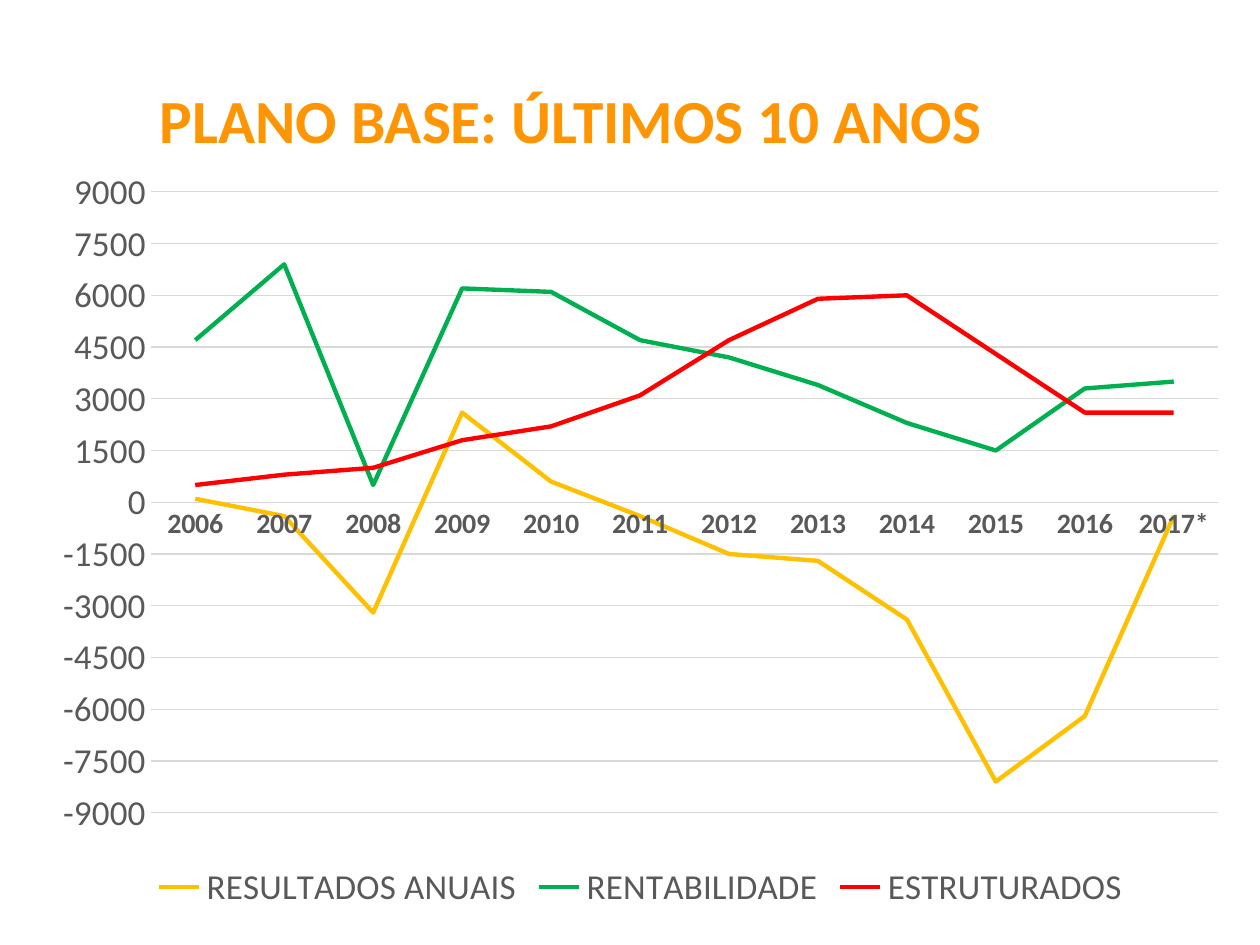
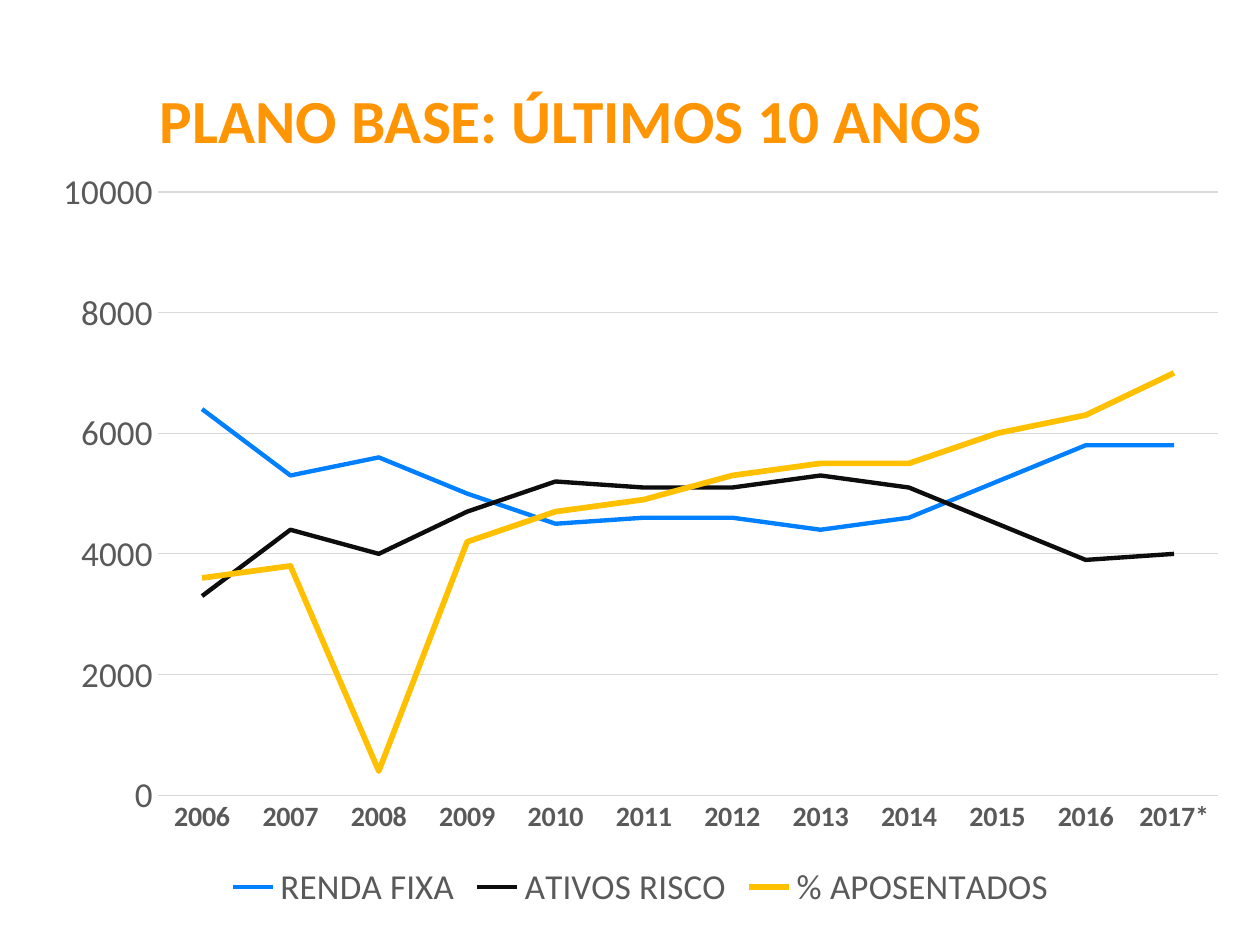
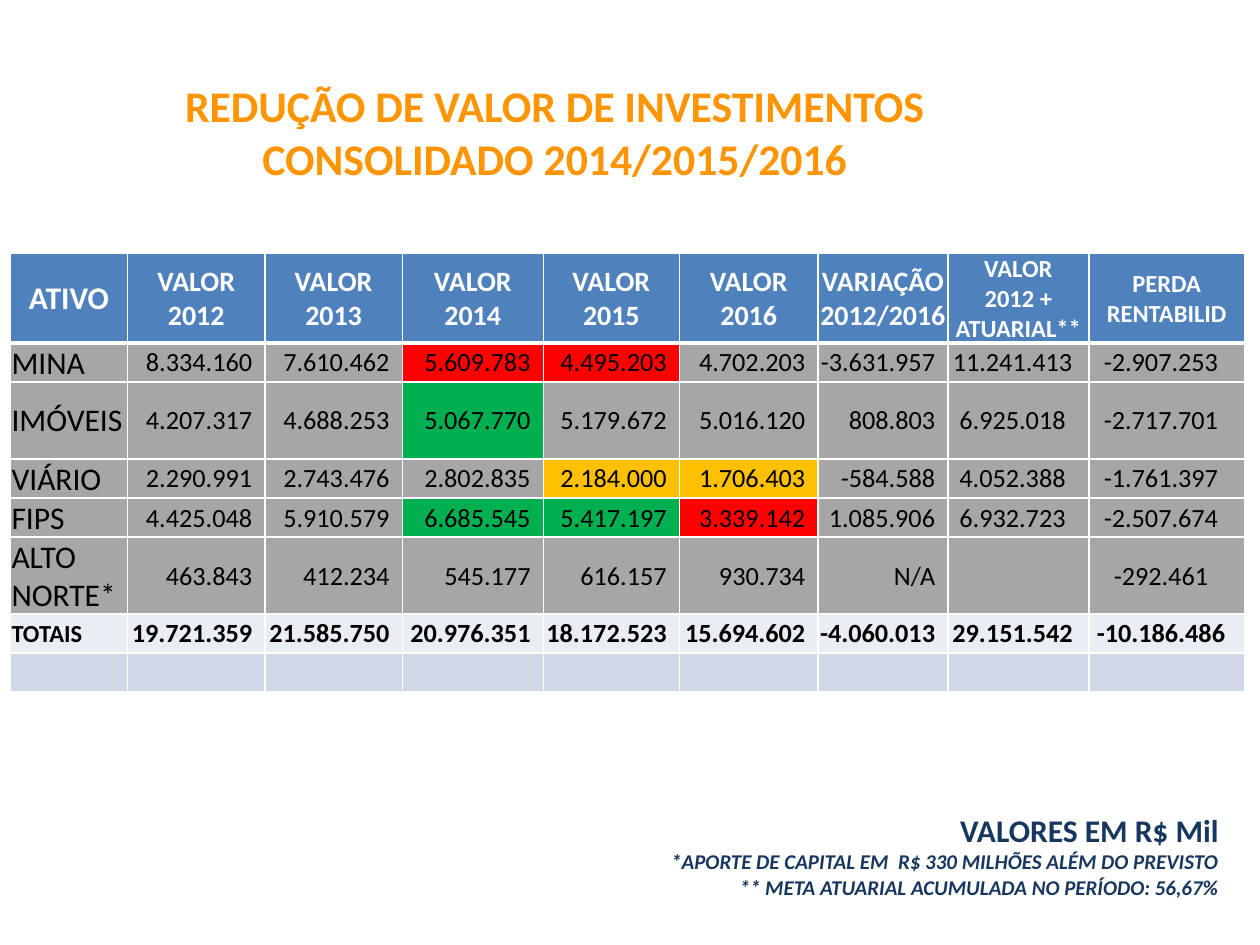
from pptx import Presentation
from pptx.chart.data import CategoryChartData
from pptx.dml.color import RGBColor
from pptx.enum.chart import XL_CHART_TYPE as ChartType, XL_LEGEND_POSITION as LegendPosition
from pptx.enum.chart import XL_TICK_MARK as TickMark
from pptx.enum.text import MSO_ANCHOR as Anchor, MSO_AUTO_SIZE as AutoSize, PP_ALIGN as Align
from pptx.oxml import parse_xml
from pptx.oxml.ns import nsdecls
from pptx.util import Pt

FONT = "Calibri"
COLORS = {
    "title": "FF9502", "note": "17375E", "axis_text": "595959", "grid": "D9D9D9",
    "yellow": "FFC000", "green": "00B050", "red": "FF0000", "blue": "0080FF",
    "near_black": "0D0D0D", "black": "000000", "white": "FFFFFF",
    "header": "4F81BD", "gray": "A6A6A6", "totals": "E9EDF4", "blank_row": "D0D8E8",
}
TITLE_ONLY = 5
PLAN_TITLE = ["PLANO BASE: ÚLTIMOS 10 ANOS"]
YEARS = [str(year) for year in range(2006, 2017)] + ["2017*"]

# Series: name, colour, line width, values
RESULT_SERIES = [
    ("RESULTADOS ANUAIS", "yellow", 2.5,
     [100, -400, -3200, 2600, 600, -400, -1500, -1700, -3400, -8100, -6200, -400]),
    ("RENTABILIDADE", "green", 2.5,
     [4700, 6900, 500, 6200, 6100, 4700, 4200, 3400, 2300, 1500, 3300, 3500]),
    ("ESTRUTURADOS", "red", 2.5,
     [500, 800, 1000, 1800, 2200, 3100, 4700, 5900, 6000, 4300, 2600, 2600]),
]
ALLOCATION_SERIES = [
    ("RENDA FIXA", "blue", 2.5,
     [6400, 5300, 5600, 5000, 4500, 4600, 4600, 4400, 4600, 5200, 5800, 5800]),
    ("ATIVOS RISCO", "near_black", 2.5,
     [3300, 4400, 4000, 4700, 5200, 5100, 5100, 5300, 5100, 4500, 3900, 4000]),
    ("% APOSENTADOS", "yellow", 3.25,
     [3600, 3800, 400, 4200, 4700, 4900, 5300, 5500, 5500, 6000, 6300, 7000]),
]

# Table of assets
HEADERS = ["ATIVO", "VALOR 2012", "VALOR 2013", "VALOR 2014", "VALOR 2015", "VALOR 2016",
           "VARIAÇÃO\v2012/2016", "VALOR\n2012 + ATUARIAL**", "PERDA\nRENTABILID"]
HEADER_SIZES = [18] + [16] * 6 + [14] * 2
ASSETS = [
    ["MINA", "8.334.160", "7.610.462", "5.609.783", "4.495.203", "4.702.203",
     "-3.631.957", "11.241.413", "-2.907.253"],
    ["IMÓVEIS", "4.207.317", "4.688.253", "5.067.770", "5.179.672", "5.016.120",
     "808.803", "6.925.018", "-2.717.701"],
    ["VIÁRIO", "2.290.991", "2.743.476", "2.802.835", "2.184.000", "1.706.403",
     "-584.588", "4.052.388", "-1.761.397"],
    ["FIPS", "4.425.048", "5.910.579", "6.685.545", "5.417.197", "3.339.142",
     "1.085.906", "6.932.723", "-2.507.674"],
    ["ALTO NORTE*", "463.843", "412.234", "545.177", "616.157", "930.734",
     "N/A", "", "-292.461"],
]
TOTALS = ["TOTAIS", "19.721.359", "21.585.750", "20.976.351", "18.172.523", "15.694.602",
          "-4.060.013", "29.151.542", "-10.186.486"]
HIGHLIGHTS = {
    (1, 3): "red", (1, 4): "red", (2, 3): "green", (3, 4): "yellow", (3, 5): "yellow",
    (4, 3): "green", (4, 4): "green", (4, 5): "red",
}
COLUMN_WIDTHS = [67, 78.5, 78.5, 80.6, 77.8, 79.2, 74.2, 80.6, 89]
ROW_HEIGHTS = [51, 22.3, 44, 22.3, 22.3, 44, 22.3, 22.3]


def rgb(name):
    return RGBColor.from_string(COLORS[name])


def style_font(font, size, color, bold=False, italic=False):
    font.name = FONT
    font.size = Pt(size)
    font.bold = bold
    font.italic = italic
    font.color.rgb = rgb(color)


def add_titled_slide(presentation, lines, size, left, top):
    slide = presentation.slides.add_slide(presentation.slide_layouts[TITLE_ONLY])
    title = slide.shapes.title
    title.left, title.top, title.width, title.height = Pt(left), Pt(top), Pt(618), Pt(65.5)
    frame = title.text_frame
    frame.text = "\n".join(lines)
    frame.auto_size = AutoSize.NONE
    frame.vertical_anchor = Anchor.MIDDLE
    for paragraph in frame.paragraphs:
        paragraph.alignment = Align.CENTER
        style_font(paragraph.font, size, "title", bold=True)
    return slide


def add_line_chart(slide, series_rows, minimum, maximum, step):
    data = CategoryChartData(number_format="General")
    data.categories = YEARS
    for name, _, _, values in series_rows:
        data.add_series(name, values)
    chart = slide.shapes.add_chart(
        ChartType.LINE, Pt(22.3), Pt(88.6), Pt(687.6), Pt(434.9), data).chart
    chart.has_title = False
    style_font(chart.font, 10, "black")

    # Lines
    chart.plots[0].vary_by_categories = False
    for series, (_, color, width, _) in zip(chart.plots[0].series, series_rows):
        series.smooth = False
        series.format.line.color.rgb = rgb(color)
        series.format.line.width = Pt(width)

    # Axes
    years, amounts = chart.category_axis, chart.value_axis
    for axis, size, bold in ((years, 16, True), (amounts, 20, False)):
        axis.major_tick_mark = axis.minor_tick_mark = TickMark.NONE
        style_font(axis.tick_labels.font, size, "axis_text", bold)
    amounts.minimum_scale, amounts.maximum_scale = minimum, maximum
    amounts.major_unit = step
    amounts.has_major_gridlines = True
    amounts.format.line.fill.background()
    for line in (years.format.line, amounts.major_gridlines.format.line):
        line.color.rgb = rgb("grid")
        line.width = Pt(0.75)

    # Legend
    chart.has_legend = True
    chart.legend.position = LegendPosition.BOTTOM
    chart.legend.include_in_layout = False
    style_font(chart.legend.font, 20, "axis_text")


def add_borders(cell, top, bottom):
    properties = cell._tc.get_or_add_tcPr()
    for side, width in (("L", 1), ("R", 1), ("T", top), ("B", bottom)):
        properties.append(parse_xml(
            f'<a:ln{side} {nsdecls("a")} w="{Pt(width)}"><a:solidFill>'
            f'<a:srgbClr val="{COLORS["white"]}"/></a:solidFill></a:ln{side}>'))


def fill_cell(cell, text, fill, align, size, color="black", bold=False, right=0.7):
    cell.fill.solid()
    cell.fill.fore_color.rgb = rgb(fill)
    cell.vertical_anchor = Anchor.MIDDLE
    cell.margin_left = cell.margin_top = Pt(0.7)
    cell.margin_right, cell.margin_bottom = Pt(right), Pt(0)
    cell.text_frame.text = text
    for paragraph in cell.text_frame.paragraphs:
        paragraph.alignment = align
        style_font(paragraph.font, size, color, bold)


def add_asset_table(slide):
    rows = [HEADERS, *ASSETS, TOTALS, [""] * len(HEADERS)]
    fills = ["header"] + ["gray"] * len(ASSETS) + ["totals", "blank_row"]
    table = slide.shapes.add_table(
        len(rows), len(HEADERS), Pt(5.9), Pt(144.8),
        Pt(sum(COLUMN_WIDTHS)), Pt(sum(ROW_HEIGHTS))).table
    table.horz_banding = False
    for column, width in zip(table.columns, COLUMN_WIDTHS):
        column.width = Pt(width)
    for row, height in zip(table.rows, ROW_HEIGHTS):
        row.height = Pt(height)

    for row_index, row in enumerate(rows):
        is_total = row is TOTALS
        for column_index, text in enumerate(row):
            cell = table.cell(row_index, column_index)
            add_borders(cell, 3 if row_index == 1 else 1, 3 if row_index == 0 else 1)
            fill = HIGHLIGHTS.get((row_index, column_index), fills[row_index])
            if row_index == 0:
                fill_cell(cell, text, fill, Align.CENTER, HEADER_SIZES[column_index],
                          "white", bold=True)
            elif column_index == 0:
                fill_cell(cell, text, fill, Align.LEFT, 14 if is_total else 18, bold=is_total)
            else:
                align = Align.RIGHT if column_index < 7 else Align.CENTER
                fill_cell(cell, text, fill, align, 15, bold=is_total, right=7.2)


def add_notes_box(slide, lines):
    box = slide.shapes.add_textbox(Pt(209.5), Pt(460), Pt(494), Pt(80))
    frame = box.text_frame
    frame.word_wrap = True
    frame.text = "\n".join(text for text, _, _ in lines)
    for paragraph, (_, size, italic) in zip(frame.paragraphs, lines):
        paragraph.alignment = Align.RIGHT
        style_font(paragraph.font, size, "note", bold=True, italic=italic)


def main():
    presentation = Presentation()
    presentation.slide_width, presentation.slide_height = Pt(720), Pt(540)

    # Charts of the last ten years
    for series_rows, minimum, maximum, step in (
            (RESULT_SERIES, -9000, 9000, 1500), (ALLOCATION_SERIES, 0, 10000, 2000)):
        slide = add_titled_slide(presentation, PLAN_TITLE, 35, 17.3, 35.3)
        add_line_chart(slide, series_rows, minimum, maximum, step)

    # Loss of value by asset
    slide = add_titled_slide(
        presentation, ["REDUÇÃO DE VALOR DE INVESTIMENTOS", "CONSOLIDADO 2014/2015/2016"],
        25, 7.9, 42.5)
    add_notes_box(slide, [
        ("VALORES EM R$ Mil", 18, False),
        ("*APORTE DE CAPITAL EM  R$ 330 MILHÕES ALÉM DO PREVISTO", 12, True),
        ("** META ATUARIAL ACUMULADA NO PERÍODO: 56,67%", 12, True),
    ])
    add_asset_table(slide)

    presentation.save("out.pptx")


if __name__ == "__main__":
    main()
